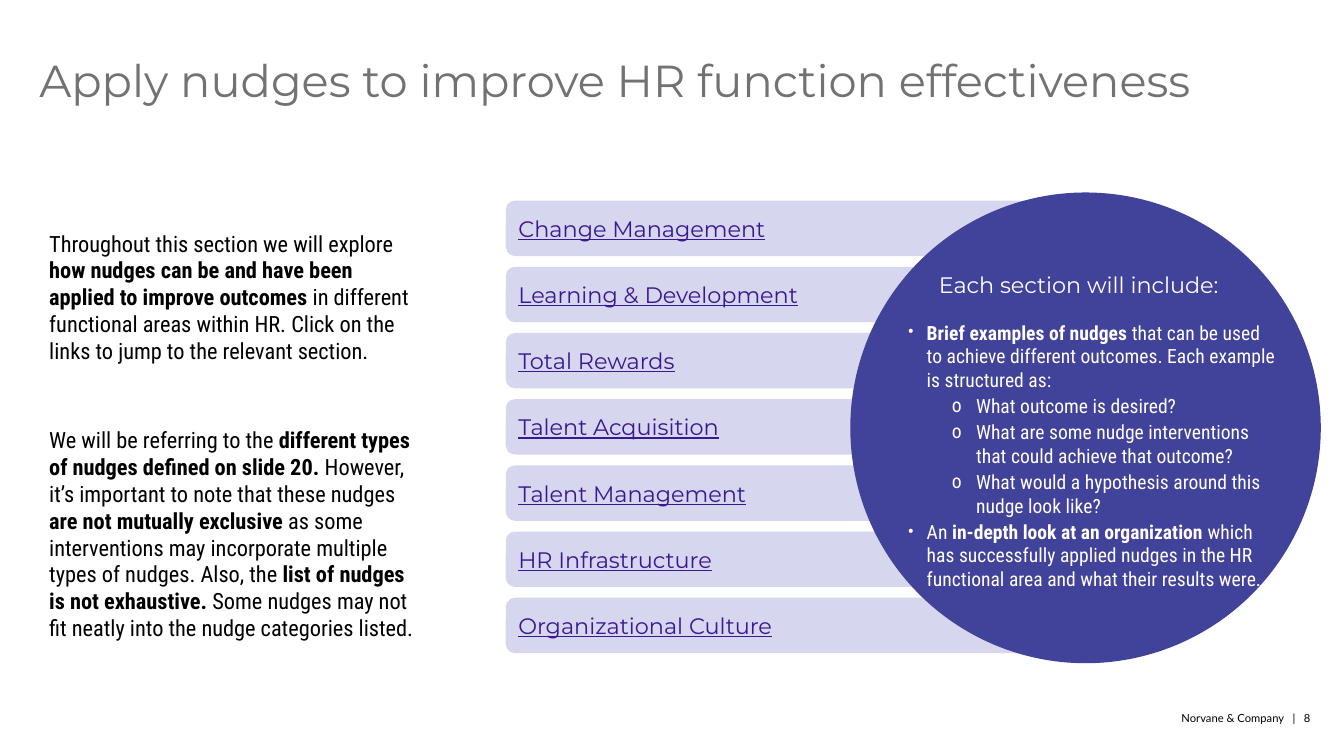
from lxml import etree
from pptx import Presentation
from pptx.dml.color import RGBColor
from pptx.enum.shapes import MSO_SHAPE
from pptx.enum.text import MSO_ANCHOR, PP_ALIGN
from pptx.oxml.ns import qn
from pptx.util import Inches, Pt

ROUNDED_BAR, CIRCLE = MSO_SHAPE.FLOWCHART_ALTERNATE_PROCESS, MSO_SHAPE.OVAL
TOP, MIDDLE = MSO_ANCHOR.TOP, MSO_ANCHOR.MIDDLE
LEFT, RIGHT = PP_ALIGN.LEFT, PP_ALIGN.RIGHT

BLACK = RGBColor(0x00, 0x00, 0x00)
WHITE = RGBColor(0xFF, 0xFF, 0xFF)
GREY = RGBColor(0x71, 0x72, 0x72)
LAVENDER = RGBColor(0xD6, 0xD6, 0xEE)
INDIGO = RGBColor(0x41, 0x42, 0x99)
LINK_PURPLE = RGBColor(0x3A, 0x18, 0x91)
HEADING_FONT, BODY_FONT, FOOTER_FONT = "Montserrat", "Roboto Condensed", "Lato"

# Content: a run is (text, bold)
TITLE = "Apply nudges to improve HR function effectiveness"
FOOTER = "Norvane & Company   |   8"
SECTIONS = [
    "Change Management", "Learning & Development", "Total Rewards",
    "Talent Acquisition", "Talent Management", "HR Infrastructure",
    "Organizational Culture",
]
INTRODUCTION = [
    ("Throughout this section we will explore", False),
    (" how nudges can be and have been applied to improve outcomes ", True),
    ("in different functional areas within HR. Click on the links to jump "
     "to the relevant section.", False),
]
CAVEATS = [
    ("We will be referring to the ", False),
    ("different types of nudges defined on slide 20.", True),
    (" However, it’s important to note that these nudges ", False),
    ("are not mutually exclusive ", True),
    ("as some interventions may incorporate multiple types of nudges. Also, the ", False),
    ("list of nudges is not exhaustive. ", True),
    ("Some nudges may not fit neatly into the nudge categories listed.", False),
]
CIRCLE_HEADING = "Each section will include:"
# (level, runs)
CIRCLE_BULLETS = [
    (0, [("Brief examples of nudges ", True),
         ("that can be used to achieve different outcomes. Each example is "
          "structured as:", False)]),
    (1, [("What outcome is desired?", False)]),
    (1, [("What are some nudge interventions that could achieve that outcome?", False)]),
    (1, [("What would a hypothesis around this nudge look like?", False)]),
    (0, [("An ", False), ("in-depth look at an organization ", True),
         ("which has successfully applied nudges in the HR functional area and "
          "what their results were.", False)]),
]
# level: (bullet, text indent, hanging indent)
BULLET_STYLES = {0: ("•", 0.19, 0.19), 1: ("o", 0.68, 0.24)}

# Layout in inches
SLIDE_WIDTH, SLIDE_HEIGHT = 13.34, 7.5
MARGIN, TEXT_WIDTH = 0.39, 3.83
BAR_LEFT, BAR_TOP, BAR_WIDTH, BAR_HEIGHT = 5.02, 1.99, 5.19, 0.55
BAR_PITCH = (5.93 - BAR_TOP) / (len(SECTIONS) - 1)
CIRCLE_LEFT, CIRCLE_TOP, CIRCLE_SIZE = 8.44, 1.91, 4.67

presentation = Presentation()
presentation.slide_width = Inches(SLIDE_WIDTH)
presentation.slide_height = Inches(SLIDE_HEIGHT)
slide = presentation.slides.add_slide(presentation.slide_layouts[6])


def add_runs(paragraph, runs, font, size, color, underline=False):
    for text, bold in runs:
        run = paragraph.add_run()
        run.text = text
        run.font.name, run.font.size, run.font.bold = font, Pt(size), bold
        run.font.color.rgb = color
        if underline:
            run.font.underline = True


def add_text(box, runs, font, size, color, align=LEFT, spacing=None, inset=True, wrap=True):
    frame = slide.shapes.add_textbox(*map(Inches, box)).text_frame
    frame.word_wrap, frame.vertical_anchor = wrap, TOP
    if not inset:
        frame.margin_left = frame.margin_right = frame.margin_top = frame.margin_bottom = 0
    paragraph = frame.paragraphs[0]
    paragraph.alignment = align
    if spacing:
        paragraph.line_spacing = spacing
    add_runs(paragraph, runs, font, size, color)
    return frame


def add_filled_shape(kind, box, color):
    shape = slide.shapes.add_shape(kind, *map(Inches, box))
    shape.shadow.inherit = False
    shape.fill.solid()
    shape.fill.fore_color.rgb = color
    shape.line.fill.background()
    return shape


def add_bullet(paragraph, level):
    character, indent, hanging = BULLET_STYLES[level]
    paragraph.level = level
    properties = paragraph._p.get_or_add_pPr()
    properties.set("marL", str(Inches(indent)))
    properties.set("indent", str(-Inches(hanging)))
    etree.SubElement(properties, qn("a:buFont"), typeface=BODY_FONT)
    etree.SubElement(properties, qn("a:buChar"), char=character)


# Title and footer
add_text((MARGIN, 0.58, 12.16, 1.24), [(TITLE, False)], HEADING_FONT, 32, GREY,
         spacing=0.9, inset=False)
add_text((10.74, 7.04, 2.27, 0.2), [(FOOTER, False)], FOOTER_FONT, 8, BLACK,
         align=RIGHT, spacing=1.1, inset=False)

# Left column
for top, height, runs in ((2.23, 1.45, INTRODUCTION), (4.18, 2.26, CAVEATS)):
    add_text((MARGIN, top, TEXT_WIDTH, height), runs, BODY_FONT, 16, BLACK)

# Section bars
for row, section in enumerate(SECTIONS):
    bar = add_filled_shape(
        ROUNDED_BAR, (BAR_LEFT, BAR_TOP + row * BAR_PITCH, BAR_WIDTH, BAR_HEIGHT), LAVENDER)
    bar.text_frame.vertical_anchor = MIDDLE
    label = bar.text_frame.paragraphs[0]
    label.alignment = LEFT
    add_runs(label, [(section, False)], HEADING_FONT, 16, LINK_PURPLE, underline=True)

# Circle with its heading and bullets
add_filled_shape(CIRCLE, (CIRCLE_LEFT, CIRCLE_TOP, CIRCLE_SIZE, CIRCLE_SIZE), INDIGO)
add_text((9.22, 2.64, 3.12, 0.37), [(CIRCLE_HEADING, False)], HEADING_FONT, 16, WHITE,
         wrap=False)
bullets = add_text((8.91, 3.13, 3.88, 2.8), [], BODY_FONT, 14, WHITE)
for index, (level, runs) in enumerate(CIRCLE_BULLETS):
    paragraph = bullets.add_paragraph() if index else bullets.paragraphs[0]
    add_bullet(paragraph, level)
    paragraph.space_before = Pt(1 if index else 0)
    paragraph.space_after = Pt(1)
    add_runs(paragraph, runs, BODY_FONT, 14, WHITE)

presentation.save("out.pptx")
